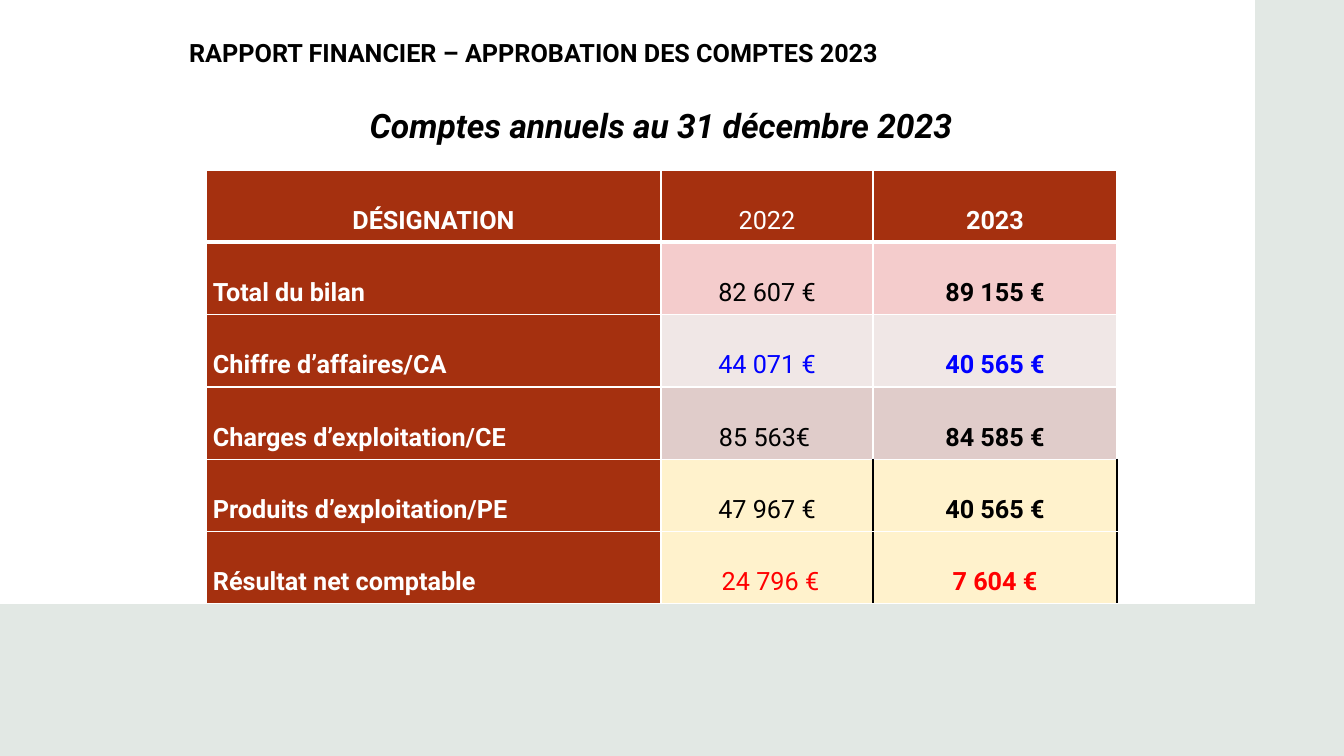
from dataclasses import dataclass

from lxml import etree
from pptx import Presentation
from pptx.dml.color import RGBColor
from pptx.enum.shapes import MSO_SHAPE
from pptx.enum.text import MSO_ANCHOR, MSO_AUTO_SIZE, PP_ALIGN
from pptx.oxml.ns import qn
from pptx.util import Emu, Pt

RECTANGLE = MSO_SHAPE.RECTANGLE
LEFT, CENTER = PP_ALIGN.LEFT, PP_ALIGN.CENTER
TOP, BOTTOM = MSO_ANCHOR.TOP, MSO_ANCHOR.BOTTOM
NO_AUTOFIT = MSO_AUTO_SIZE.NONE

EMU_PER_PX = 914400 / 100.8
SLIDE_WIDTH, SLIDE_HEIGHT = 1344, 756


@dataclass(frozen=True)
class Theme:
    font: str = "Roboto"
    body_size: int = 18
    subtitle_size: int = 24
    thin_line: float = 0.96
    thick_line: float = 3
    white: str = "FFFFFF"
    black: str = "000000"
    backdrop: str = "E2E8E4"
    brick: str = "A5300F"
    pink: str = "F4CCCC"
    pale: str = "F0E7E6"
    mauve: str = "E0CCCA"
    cream: str = "FFF2CC"
    blue: str = "0000FF"
    red: str = "FF0000"


THEME = Theme()

# Designation, 2022, 2023, fill and colour of the values
HEADER = ("DÉSIGNATION", "2022", "2023", THEME.brick, THEME.white)
ACCOUNTS = [
    HEADER,
    ("Total du bilan", "82 607 €", "89 155 €", THEME.pink, THEME.black),
    ("Chiffre d’affaires/CA", "44 071 €", "40 565 €", THEME.pale, THEME.blue),
    ("Charges d’exploitation/CE", "85 563€", "84 585 €", THEME.mauve, THEME.black),
    ("Produits d’exploitation/PE", "47 967 €", "40 565 €", THEME.cream, THEME.black),
    ("Résultat net comptable", "24 796 €", "7 604 €", THEME.cream, THEME.red),
]
COLUMN_WIDTHS = (455, 212, 244)
TABLE_LEFT, TABLE_TOP, TABLE_HEIGHT = 206, 170, 434
CELL_INSET = 7
# Cells pushed right by a wider left inset: (row, column): px
SHIFTED_CELLS = {(3, 1): 58, (5, 1): 14}


def px(length):
    return Emu(round(length * EMU_PER_PX))


def place(shape, left, top, width, height):
    shape.left, shape.top = px(left), px(top)
    shape.width, shape.height = px(width), px(height)


def write(frame, text, size, color, align, spacing, bold=True, italic=False):
    frame.text = text
    paragraph = frame.paragraphs[0]
    paragraph.alignment = align
    paragraph.line_spacing = spacing
    font = paragraph.runs[0].font
    font.name, font.size = THEME.font, Pt(size)
    font.bold, font.italic = bold, italic
    font.color.rgb = RGBColor.from_string(color)


def add_panel(slide, width, height, color):
    panel = slide.shapes.add_shape(RECTANGLE, 0, 0, px(width), px(height))
    panel.shadow.inherit = False
    panel.fill.solid()
    panel.fill.fore_color.rgb = RGBColor.from_string(color)
    panel.line.fill.background()


def add_subtitle(slide, text):
    subtitle = slide.shapes.add_textbox(px(-11), px(94), px(SLIDE_WIDTH), px(53))
    subtitle.text_frame.word_wrap = True
    write(subtitle.text_frame, text, THEME.subtitle_size, THEME.black, CENTER, 1.15, italic=True)


def set_title(slide, text):
    title = slide.shapes.title
    place(title, 179, 29, 897, 46)
    frame = title.text_frame
    frame.auto_size = NO_AUTOFIT
    frame.vertical_anchor = TOP
    write(frame, text, THEME.body_size, THEME.black, LEFT, 1.1)
    # Bring the title in front of the panels
    slide.shapes._spTree.append(title._element)


def set_border(cell, side, color, width):
    line = etree.SubElement(cell._tc.get_or_add_tcPr(), qn(f"a:ln{side}"), w=str(Pt(width)))
    fill = etree.SubElement(line, qn("a:solidFill"))
    etree.SubElement(fill, qn("a:srgbClr"), val=color)


def style_borders(cell, row, column):
    # The last two rows have black lines around the 2023 column
    closing = row >= len(ACCOUNTS) - 2
    left = THEME.black if closing and column == 2 else THEME.white
    right = THEME.black if closing and column >= 1 else THEME.white
    set_border(cell, "L", left, THEME.thin_line)
    set_border(cell, "R", right, THEME.thin_line)
    set_border(cell, "T", THEME.white, THEME.thick_line if row == 1 else THEME.thin_line)
    set_border(cell, "B", THEME.white, THEME.thick_line if row == 0 else THEME.thin_line)


def fill_cell(cell, row, column):
    *texts, value_fill, value_color = ACCOUNTS[row]
    is_label = column == 0
    shift = SHIFTED_CELLS.get((row, column), CELL_INSET)
    left_aligned = (is_label and row > 0) or shift > 50
    color = THEME.white if is_label else value_color
    style_borders(cell, row, column)
    cell.fill.solid()
    cell.fill.fore_color.rgb = RGBColor.from_string(THEME.brick if is_label else value_fill)
    cell.vertical_anchor = BOTTOM
    cell.margin_left, cell.margin_right = px(shift), px(CELL_INSET)
    cell.margin_top, cell.margin_bottom = px(5), px(CELL_INSET)
    write(cell.text_frame, texts[column], THEME.body_size, color,
          LEFT if left_aligned else CENTER, 1.07, bold=column != 1)


def add_accounts_table(slide):
    count = len(ACCOUNTS)
    table = slide.shapes.add_table(
        count, len(COLUMN_WIDTHS), px(TABLE_LEFT), px(TABLE_TOP),
        px(sum(COLUMN_WIDTHS)), px(TABLE_HEIGHT)).table
    table.horz_banding = False
    for column, width in enumerate(COLUMN_WIDTHS):
        table.columns[column].width = px(width)
    for row in range(count):
        table.rows[row].height = px(TABLE_HEIGHT / count)
        for column in range(len(COLUMN_WIDTHS)):
            fill_cell(table.cell(row, column), row, column)


def main():
    presentation = Presentation()
    presentation.slide_width, presentation.slide_height = px(SLIDE_WIDTH), px(SLIDE_HEIGHT)
    title_only = presentation.slide_layouts[5]
    slide = presentation.slides.add_slide(title_only)

    # Backdrop and white page
    add_panel(slide, SLIDE_WIDTH, SLIDE_HEIGHT, THEME.backdrop)
    add_panel(slide, 1255, 604, THEME.white)

    # Headings and accounts
    add_subtitle(slide, "Comptes annuels au 31 décembre 2023")
    add_accounts_table(slide)
    set_title(slide, "RAPPORT FINANCIER – APPROBATION DES COMPTES 2023")

    presentation.save("out.pptx")


if __name__ == "__main__":
    main()
